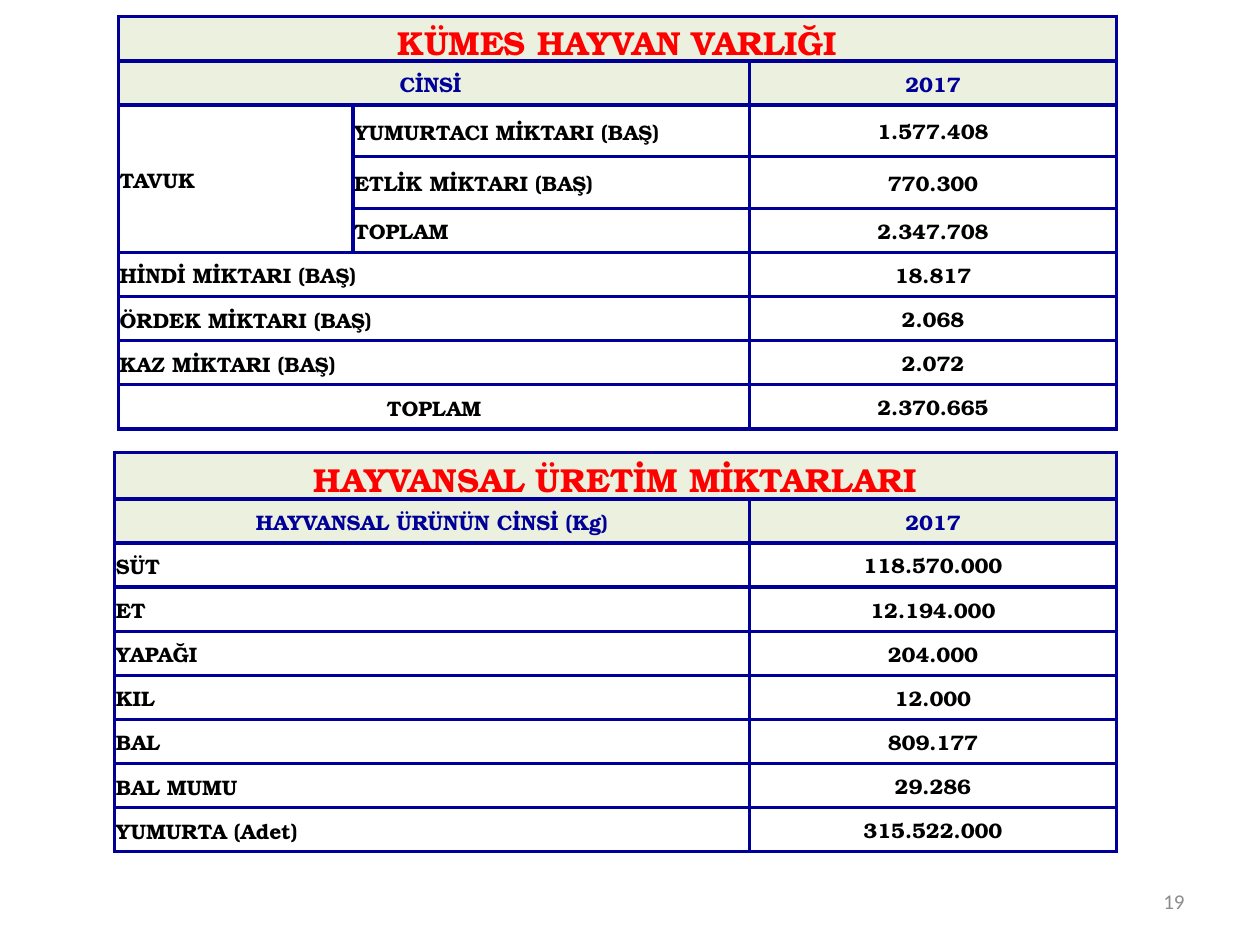
from dataclasses import dataclass

from lxml.etree import SubElement
from pptx import Presentation
from pptx.dml.color import RGBColor
from pptx.enum.text import MSO_ANCHOR, PP_ALIGN
from pptx.oxml.ns import qn
from pptx.util import Inches, Pt

POULTRY_ROWS = [
    ("KÜMES HAYVAN VARLIĞI", None, None),
    ("CİNSİ ", None, "2017"),
    ("TAVUK", "YUMURTACI MİKTARI (BAŞ)", "1.577.408"),
    (None, "ETLİK MİKTARI (BAŞ)", "770.300"),
    (None, "TOPLAM", "2.347.708"),
    ("HİNDİ MİKTARI (BAŞ)", None, "18.817"),
    ("ÖRDEK MİKTARI (BAŞ)", None, "2.068"),
    ("KAZ MİKTARI (BAŞ)", None, "2.072"),
    ("TOPLAM", None, "2.370.665"),
]
POULTRY_MERGES = [(0, 0, 0, 2), (2, 0, 4, 0)] + [(row, 0, row, 1) for row in (1, 5, 6, 7, 8)]
PRODUCT_ROWS = [
    ("HAYVANSAL ÜRETİM MİKTARLARI", None),
    ("HAYVANSAL ÜRÜNÜN CİNSİ (Kg)", "2017"),
    ("SÜT", "118.570.000"),
    ("ET", "12.194.000"),
    ("YAPAĞI", "204.000"),
    ("KIL", "12.000"),
    ("BAL", "809.177"),
    ("BAL MUMU", "29.286"),
    ("YUMURTA (Adet)", "315.522.000"),
]


def color(value):
    """Return the colour for a hex string."""
    return RGBColor.from_string(value)


def write(frame, text, *, font, size, fill, bold=False, align=PP_ALIGN.LEFT):
    """Write one formatted line into a text frame."""
    paragraph = frame.paragraphs[0]
    paragraph.alignment = align
    run = paragraph.add_run()
    run.text = text
    run.font.name = font
    run.font.size = Pt(size)
    run.font.bold = bold
    run.font.color.rgb = color(fill)


@dataclass
class SlideBuilder:
    """Hold the style and the current slide."""

    slide: object
    font: str = "TeX Gyre Bonum"
    navy: str = "000099"
    title_color: str = "FF0000"
    header_fill: str = "EBF1DE"
    body_fill: str = "FFFFFF"
    body_color: str = "000000"

    def borders(self, cell):
        """Draw all four borders of a cell."""
        properties = cell._tc.get_or_add_tcPr()
        for side in ("a:lnL", "a:lnR", "a:lnT", "a:lnB"):
            line = SubElement(properties, qn(side), w=str(Pt(2.25)))
            solid = SubElement(line, qn("a:solidFill"))
            SubElement(solid, qn("a:srgbClr"), val=self.navy)

    def cell(self, cell, text, row, is_value, centered):
        """Style one cell by its row and role, letting the title hang low in its tight row."""
        is_header = row < 2
        is_number = is_value and not is_header
        self.borders(cell)
        cell.fill.solid()
        cell.fill.fore_color.rgb = color(self.header_fill if is_header else self.body_fill)
        cell.vertical_anchor = MSO_ANCHOR.MIDDLE
        cell.margin_left = cell.margin_right = Inches(0.07 if is_number else 0.01)
        cell.margin_top = Inches(0 if is_number else 0.01)
        cell.margin_bottom = Inches(-0.04 if row == 0 else 0)
        if text is None:
            return
        write(
            cell.text_frame,
            text,
            font=self.font,
            size=19 if row == 0 else 12,
            fill=(self.title_color, self.navy, self.body_color)[min(row, 2)],
            bold=True,
            align=PP_ALIGN.CENTER if is_header or is_value or centered else PP_ALIGN.LEFT,
        )

    def table(self, left, top, widths, heights, rows, merges, centered_rows=()):
        """Add a bordered table with a title row and a header row."""
        shape = self.slide.shapes.add_table(
            len(rows), len(widths), Inches(left), Inches(top),
            Inches(sum(widths)), Inches(sum(heights)),
        )
        table = shape.table
        table.first_row = table.horz_banding = False
        for column, width in zip(table.columns, widths):
            column.width = Inches(width)
        for table_row, height in zip(table.rows, heights):
            table_row.height = Inches(height)
        last = len(widths) - 1
        for row, texts in enumerate(rows):
            for column, text in enumerate(texts):
                self.cell(table.cell(row, column), text, row, column == last, row in centered_rows)
        for top_row, first, bottom_row, end in merges:
            table.cell(top_row, first).merge(table.cell(bottom_row, end))

    def page_number(self, text):
        """Add the page number at the lower right."""
        shape = self.slide.shapes.add_textbox(Inches(7.17), Inches(6.95), Inches(2.33), Inches(0.4))
        frame = shape.text_frame
        frame.word_wrap = True
        frame.vertical_anchor = MSO_ANCHOR.MIDDLE
        write(frame, text, font="Calibri", size=12, fill="8C8C8C", align=PP_ALIGN.RIGHT)


def main():
    """Build the slide and save it."""
    presentation = Presentation()
    presentation.slide_width = Inches(10)
    presentation.slide_height = Inches(7.5)
    builder = SlideBuilder(presentation.slides.add_slide(presentation.slide_layouts[6]))
    builder.table(
        0.94, 0.13, [1.86, 3.15, 2.91], [0.35] * 2 + [0.41] * 2 + [0.35] * 5,
        POULTRY_ROWS, POULTRY_MERGES, centered_rows=(8,),
    )
    builder.table(
        0.91, 3.59, [5.04, 2.91], [0.37] + [0.35] * 8, PRODUCT_ROWS, [(0, 0, 0, 1)],
    )
    builder.page_number("19")
    presentation.save("out.pptx")


if __name__ == "__main__":
    main()
